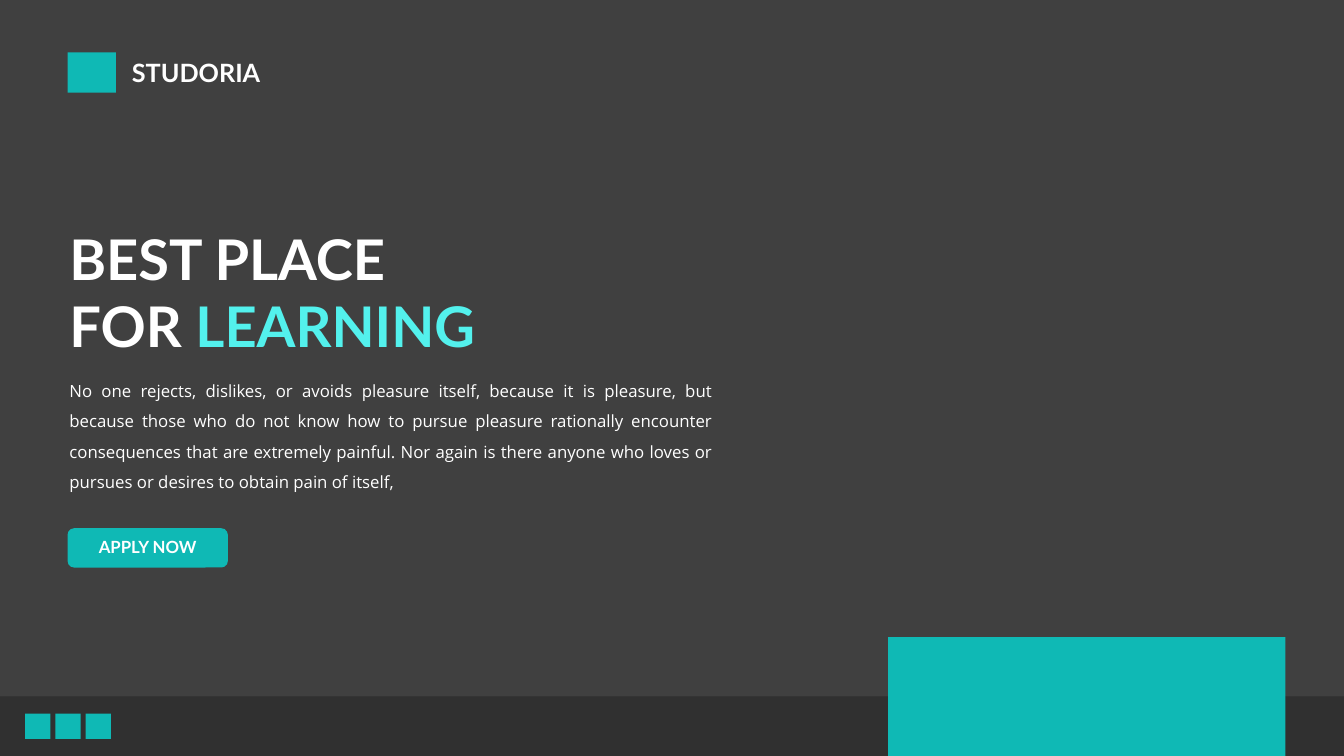
from dataclasses import dataclass

from lxml import etree
from pptx import Presentation
from pptx.dml.color import RGBColor
from pptx.enum import shapes, text
from pptx.oxml import ns
from pptx.util import Inches, Pt


@dataclass(frozen=True)
class Theme:
    """Colours, fonts and type sizes of the slide."""
    base: str = "303030"
    panel: str = "464646"
    teal: str = "0FB9B5"
    aqua: str = "53F1ED"
    white: str = "FFFFFF"
    head: str = "Lato"
    body: str = "Open Sans"
    title: int = 40
    brand: int = 18
    small: int = 12


THEME = Theme()
KIND = shapes.MSO_SHAPE
ALIGN = text.PP_ALIGN


def block(slide, box, color, kind=KIND.RECTANGLE):
    """Add a flat preset shape with no line or shadow."""
    shape = slide.shapes.add_shape(kind, *map(Inches, box))
    shape.shadow.inherit = False
    shape.fill.solid()
    shape.fill.fore_color.rgb = RGBColor.from_string(color)
    shape.line.fill.background()
    return shape


def write(slide, box, lines, size, font=THEME.head, bold=True,
          align=ALIGN.LEFT, wrap=False, space=None):
    """Add a text box from lines of (text, colour) runs."""
    frame = slide.shapes.add_textbox(*map(Inches, box)).text_frame
    frame.word_wrap = wrap
    for i, line in enumerate(lines):
        para = frame.add_paragraph() if i else frame.paragraphs[0]
        para.alignment = align
        para.line_spacing = space
        for words, color in line:
            run = para.add_run()
            run.text = words
            run.font.name = font
            run.font.size = Pt(size)
            run.font.bold = bold
            run.font.color.rgb = RGBColor.from_string(color)


def backdrop(slide, box):
    """Fill the slide, leaving a dark strip at the foot."""
    left, top, width, height = box
    fill = slide.background.fill
    fill.solid()
    fill.fore_color.rgb = RGBColor.from_string(THEME.base)
    panel = block(slide, (left, top, width, height - 0.59), THEME.panel)
    color = panel.fill._xPr.find(".//" + ns.qn("a:srgbClr"))
    etree.SubElement(color, ns.qn("a:alpha"), val="75000")
    block(slide, (left + 8.81, top + 6.32, 3.94, 1.18), THEME.teal)


def brand(slide, box):
    """Place a plain block and the school name."""
    left, top, width, height = box
    block(slide, (left, top, 0.48, height), THEME.teal)
    write(slide, (left + 0.54, top, width - 0.54, height),
          [[("STUDORIA", THEME.white)]], THEME.brand)


def pitch(slide, box):
    """Place the headline and the paragraph below it."""
    left, top, width, height = box
    write(slide, (left, top, 4.24, 1.45),
          [[("BEST PLACE", THEME.white)],
           [("FOR ", THEME.white), ("LEARNING", THEME.aqua)]], THEME.title)
    words = ("No one rejects, dislikes, or avoids pleasure itself, because it "
             "is pleasure, but because those who do not know how to pursue "
             "pleasure rationally encounter consequences that are extremely "
             "painful. Nor again is there anyone who loves or pursues or "
             "desires to obtain pain of itself,")
    write(slide, (left, top + 1.45, width, height - 1.45),
          [[(words, THEME.white)]], THEME.small, THEME.body, False,
          ALIGN.JUSTIFY, True, 1.5)


def button(slide, box):
    """Place the rounded button and its label."""
    left, top, width, height = box
    block(slide, box, THEME.teal, KIND.ROUNDED_RECTANGLE)
    write(slide, (left + 0.21, top + 0.04, width - 0.42, 0.3),
          [[("APPLY NOW", THEME.white)]], THEME.small, align=ALIGN.CENTER)


def social(slide, box):
    """Place three plain squares in an even row."""
    left, top, width, size = box
    step = (width - size) / 2
    for i in range(3):
        block(slide, (left + i * step, top, size, size), THEME.teal)


def main():
    """Build and save the slide."""
    deck = Presentation()
    deck.slide_width, deck.slide_height = Inches(13.33), Inches(7.5)
    slide = deck.slides.add_slide(deck.slide_layouts[6])
    backdrop(slide, (0, 0, 13.33, 7.5))
    pitch(slide, (0.59, 2.18, 6.58, 2.73))
    button(slide, (0.67, 5.24, 1.59, 0.39))
    brand(slide, (0.67, 0.52, 2.09, 0.4))
    social(slide, (0.25, 7.08, 0.85, 0.25))
    deck.save("out.pptx")


if __name__ == "__main__":
    main()
